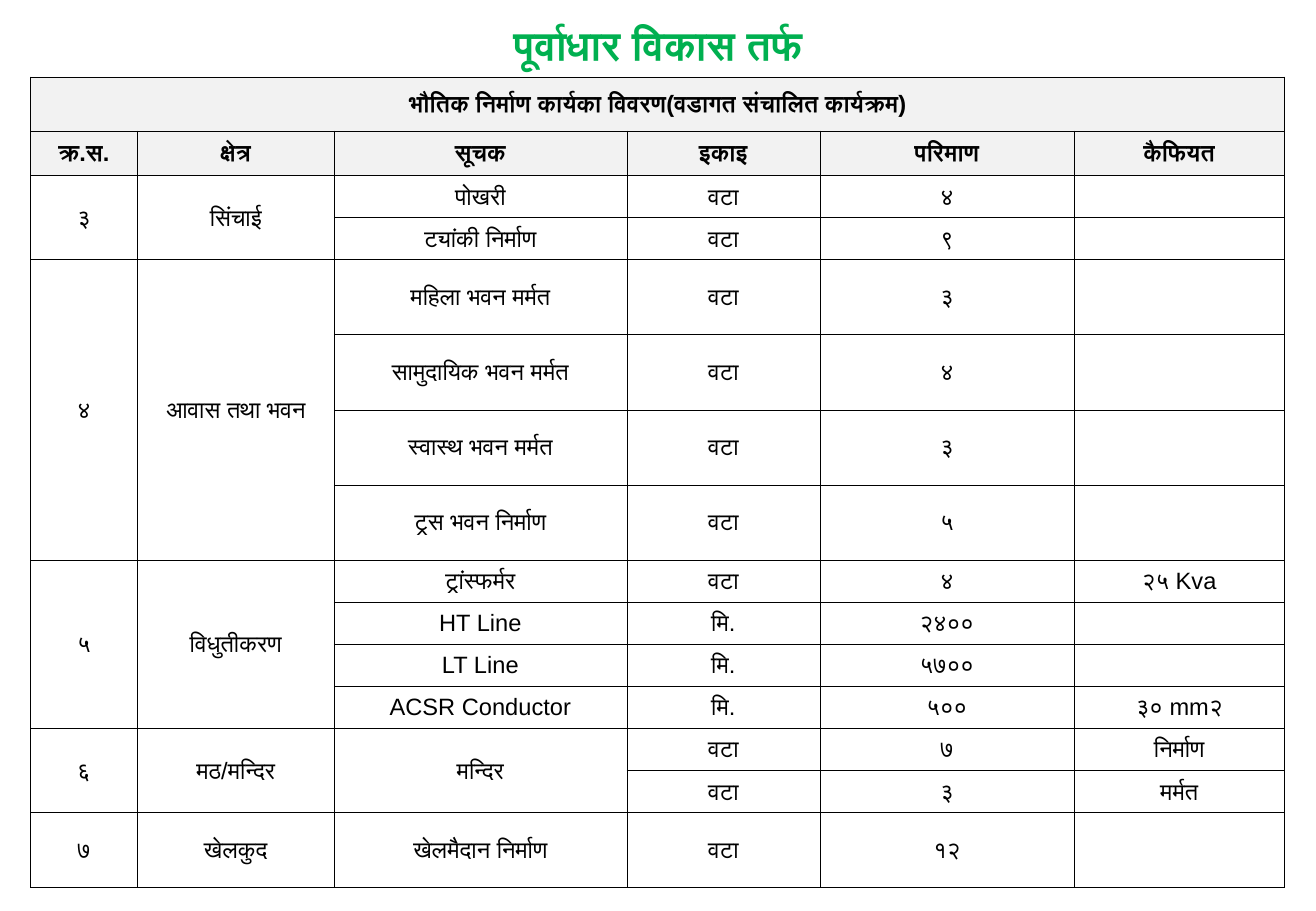
from dataclasses import dataclass

from lxml.etree import SubElement
from pptx import Presentation
from pptx.dml.color import RGBColor
from pptx.enum.text import MSO_ANCHOR as Anchor, MSO_AUTO_SIZE as AutoSize, PP_ALIGN as Align
from pptx.oxml.ns import qn
from pptx.slide import Slide
from pptx.table import Table, _Cell as Cell
from pptx.text.text import TextFrame
from pptx.util import Emu, Pt

PX_PER_INCH = 144


def px(length: int) -> Emu:
    return Emu(length * 914400 // PX_PER_INCH)


@dataclass(frozen=True)
class Theme:
    font: str = "Arial"
    title_size: int = 24
    table_size: int = 14
    title: str = "00B050"
    text: str = "000000"
    border: str = "000000"
    border_width: float = 0.25
    outline_width: float = 0.75
    paper: str = "FFFFFF"
    heading_fill: str = "F2F2F2"


@dataclass(frozen=True)
class Work:
    indicator: str
    unit: str
    quantity: str
    remark: str = ""


@dataclass(frozen=True)
class Sector:
    number: str
    name: str
    works: tuple[Work, ...]
    row_height: int = 50


THEME = Theme()
TALL_ROW = 89
COLUMN_WIDTHS = (127, 233, 347, 229, 301, 250)
HEADING_HEIGHTS = (64, 53)
TABLE_LEFT, TABLE_TOP = 36, 91
TITLE = "पूर्वाधार विकास तर्फ"
CAPTION = "भौतिक निर्माण कार्यका विवरण(वडागत संचालित कार्यक्रम)"
HEADINGS = ("क्र.स.", "क्षेत्र", "सूचक", "इकाइ", "परिमाण", "कैफियत")
SECTORS = (
    Sector("३", "सिंचाई", (
        Work("पोखरी", "वटा", "४"),
        Work("ट्यांकी निर्माण", "वटा", "९"),
    )),
    Sector("४", "आवास तथा भवन", (
        Work("महिला भवन मर्मत", "वटा", "३"),
        Work("सामुदायिक भवन मर्मत", "वटा", "४"),
        Work("स्वास्थ भवन मर्मत", "वटा", "३"),
        Work("ट्रस भवन निर्माण", "वटा", "५"),
    ), TALL_ROW),
    Sector("५", "विधुतीकरण", (
        Work("ट्रांस्फर्मर", "वटा", "४", "२५ Kva"),
        Work("HT Line", "मि.", "२४००"),
        Work("LT Line", "मि.", "५७००"),
        Work("ACSR Conductor", "मि.", "५००", "३० mm२"),
    )),
    Sector("६", "मठ/मन्दिर", (
        Work("मन्दिर", "वटा", "७", "निर्माण"),
        Work("", "वटा", "३", "मर्मत"),
    )),
    Sector("७", "खेलकुद", (Work("खेलमैदान निर्माण", "वटा", "१२"),), TALL_ROW),
)


def write(frame: TextFrame, text: str, size: int, color: str, bold: bool) -> None:
    frame.text = text
    paragraph = frame.paragraphs[0]
    paragraph.alignment = Align.CENTER
    for run in paragraph.runs:
        run.font.size = Pt(size)
        run.font.bold = bold
        run.font.color.rgb = RGBColor.from_string(color)
        run.font.name = THEME.font
        SubElement(run.font._element, qn("a:cs"), typeface=THEME.font)


def add_line(parent, tag: str, width: float, color: str):
    line = SubElement(parent, qn(tag), w=str(Pt(width)))
    fill = SubElement(line, qn("a:solidFill"))
    SubElement(fill, qn("a:srgbClr"), val=color)
    return line


def format_cell(cell: Cell, text: str, heading: bool) -> None:
    write(cell.text_frame, text, THEME.table_size, THEME.text, heading)
    cell.vertical_anchor = Anchor.MIDDLE
    cell.margin_left = cell.margin_right = cell.margin_top = px(1)
    cell.margin_bottom = 0
    properties = cell._tc.get_or_add_tcPr()
    for side in ("a:lnL", "a:lnR", "a:lnT", "a:lnB"):
        add_line(properties, side, THEME.border_width, THEME.border)
    if not heading:
        cell.fill.background()
        return
    cell.fill.solid()
    cell.fill.fore_color.rgb = RGBColor.from_string(THEME.heading_fill)
    for run in cell.text_frame.paragraphs[0].runs:
        properties = run.font._element
        properties.insert(0, add_line(properties, "a:ln", THEME.outline_width, THEME.text))


def add_title(slide: Slide) -> None:
    title = slide.shapes.title
    title.left, title.top, title.width, title.height = px(0), px(17), px(1560), px(72)
    title.fill.solid()
    title.fill.fore_color.rgb = RGBColor.from_string(THEME.paper)
    frame = title.text_frame
    write(frame, TITLE, THEME.title_size, THEME.title, True)
    frame.word_wrap = True
    frame.auto_size = AutoSize.SHAPE_TO_FIT_TEXT
    frame.vertical_anchor = Anchor.TOP


def merge_cells(table: Table) -> None:
    table.cell(0, 0).merge(table.cell(0, len(HEADINGS) - 1))
    first = len(HEADING_HEIGHTS)
    for sector in SECTORS:
        last = first + len(sector.works) - 1
        if last > first:
            for column in (0, 1):
                table.cell(first, column).merge(table.cell(last, column))
        for row, work in enumerate(sector.works, first):
            if not work.indicator:
                table.cell(row - 1, 2).merge(table.cell(row, 2))
        first = last + 1


def add_works_table(slide: Slide) -> None:
    rows = [(CAPTION,) + ("",) * (len(HEADINGS) - 1), HEADINGS]
    heights = list(HEADING_HEIGHTS)
    for sector in SECTORS:
        for index, work in enumerate(sector.works):
            labels = ("", "") if index else (sector.number, sector.name)
            rows.append((*labels, work.indicator, work.unit, work.quantity, work.remark))
            heights.append(sector.row_height)
    table = slide.shapes.add_table(
        len(rows), len(HEADINGS), px(TABLE_LEFT), px(TABLE_TOP),
        px(sum(COLUMN_WIDTHS)), px(sum(heights)),
    ).table
    table.first_row = table.horz_banding = False
    for column, width in zip(table.columns, COLUMN_WIDTHS):
        column.width = px(width)
    for index, (texts, height) in enumerate(zip(rows, heights)):
        table.rows[index].height = px(height)
        for column, text in enumerate(texts):
            format_cell(table.cell(index, column), text, index < len(HEADING_HEIGHTS))
    merge_cells(table)


def main() -> None:
    deck = Presentation()
    deck.slide_width, deck.slide_height = px(1560), px(1080)
    slide = deck.slides.add_slide(deck.slide_layouts[5])
    add_title(slide)
    add_works_table(slide)
    deck.save("out.pptx")


if __name__ == "__main__":
    main()
